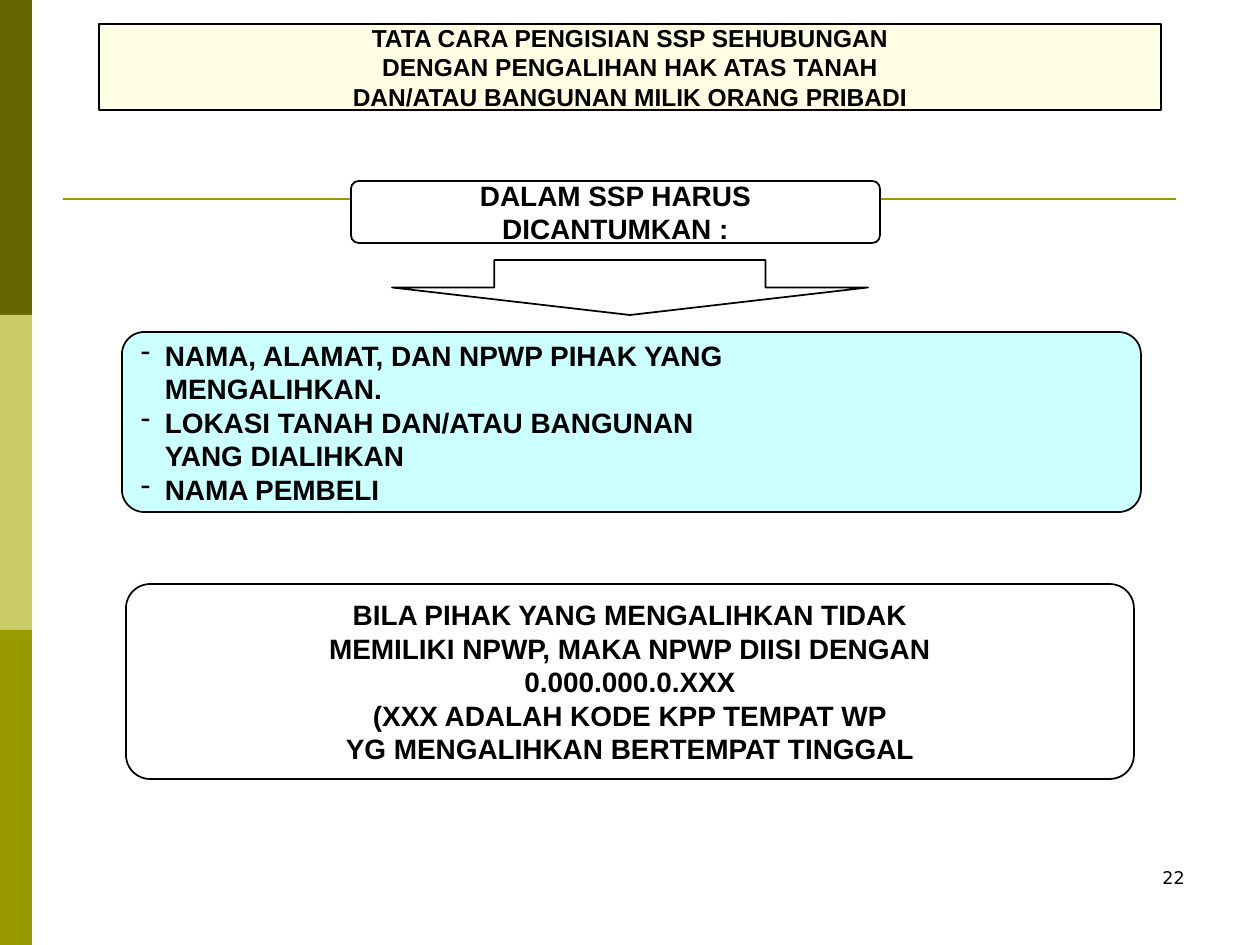
from lxml.etree import SubElement
from pptx import Presentation
from pptx.dml.color import RGBColor
from pptx.enum.shapes import MSO_CONNECTOR, MSO_SHAPE
from pptx.enum.text import MSO_ANCHOR, PP_ALIGN
from pptx.oxml.ns import qn
from pptx.util import Emu, Pt

SLIDE_WIDTH, SLIDE_HEIGHT = 1260, 945
CORNER = 0.124


def px(length):
    return Emu(round(length * 914400 / 126))


def color(code):
    return RGBColor.from_string(code)


def write_text(frame, text, size=16, font="Arial", bold=True, align=PP_ALIGN.CENTER,
               anchor=MSO_ANCHOR.MIDDLE, dash_indent=0):
    frame.word_wrap = True
    frame.vertical_anchor = anchor
    frame.text = text
    for paragraph in frame.paragraphs:
        if dash_indent:
            properties = paragraph._p.get_or_add_pPr()
            properties.set("marL", str(px(dash_indent)))
            properties.set("indent", str(-px(dash_indent)))
            SubElement(properties, qn("a:buChar"), char="-")
        paragraph.alignment = align
        for run in paragraph.runs:
            run.font.size = Pt(size)
            run.font.name = font
            run.font.bold = bold
            run.font.color.rgb = color("000000")


def add_panel(slide, kind, box, fill, outline="000000", adjustments=()):
    panel = slide.shapes.add_shape(kind, *map(px, box))
    panel.shadow.inherit = False
    panel.fill.solid()
    panel.fill.fore_color.rgb = color(fill)
    if outline:
        panel.line.color.rgb = color(outline)
        panel.line.width = Pt(1)
    else:
        panel.line.fill.background()
    for index, value in enumerate(adjustments):
        panel.adjustments[index] = value
    return panel


def add_side_band(slide, left, top, width, height):
    shades = ["666600", "CCCC66", "999900"]
    step = height // len(shades)
    for index, shade in enumerate(shades):
        add_panel(slide, MSO_SHAPE.RECTANGLE, (left, top + index * step, width, step),
                  shade, outline=None)


def add_rule(slide, left, top, width):
    rule = slide.shapes.add_connector(
        MSO_CONNECTOR.STRAIGHT, px(left), px(top), px(left + width), px(top))
    rule.line.color.rgb = color("999900")
    rule.line.width = Pt(1.5)
    SubElement(rule._element.spPr, qn("a:effectLst"))


def add_title(slide, box, text):
    title = add_panel(slide, MSO_SHAPE.RECTANGLE, box, "FFFFE5")
    write_text(title.text_frame, text, size=14)


def add_rounded_box(slide, box, text, fill="FFFFFF", **text_format):
    rounded = add_panel(slide, MSO_SHAPE.ROUNDED_RECTANGLE, box, fill, adjustments=[CORNER])
    write_text(rounded.text_frame, text, **text_format)


def add_page_number(slide, box, number):
    page_number = slide.shapes.add_textbox(*map(px, box))
    write_text(page_number.text_frame, number, size=10, font="DejaVu Sans", bold=False,
               align=PP_ALIGN.RIGHT, anchor=MSO_ANCHOR.TOP)


def main():
    deck = Presentation()
    deck.slide_width, deck.slide_height = px(SLIDE_WIDTH), px(SLIDE_HEIGHT)
    slide = deck.slides.add_slide(deck.slide_layouts[6])

    add_side_band(slide, 0, 0, 32, SLIDE_HEIGHT)
    add_rule(slide, 63, 199, 1113)
    add_page_number(slide, (903, 861, 294, 63), "22")
    add_rounded_box(slide, (126, 584, 1008, 195), "\n".join([
        "BILA PIHAK YANG MENGALIHKAN TIDAK",
        "MEMILIKI NPWP, MAKA NPWP DIISI DENGAN",
        "0.000.000.0.XXX",
        "(XXX ADALAH KODE KPP TEMPAT WP",
        "YG MENGALIHKAN BERTEMPAT TINGGAL",
    ]))
    add_rounded_box(slide, (351, 181, 529, 62), "DALAM SSP HARUS\nDICANTUMKAN :")
    add_title(slide, (99, 24, 1062, 86), "\n".join([
        "TATA CARA PENGISIAN SSP SEHUBUNGAN",
        "DENGAN PENGALIHAN HAK ATAS TANAH",
        "DAN/ATAU BANGUNAN MILIK ORANG PRIBADI",
    ]))
    add_rounded_box(slide, (122, 332, 1019, 180), "\n".join([
        "NAMA, ALAMAT, DAN NPWP PIHAK YANG\vMENGALIHKAN.",
        "LOKASI TANAH DAN/ATAU BANGUNAN\vYANG DIALIHKAN",
        "NAMA PEMBELI",
    ]), fill="CCFFFF", align=PP_ALIGN.LEFT, dash_indent=24)
    add_panel(slide, MSO_SHAPE.DOWN_ARROW, (392, 260, 476, 55), "FFFFFF",
              adjustments=[0.57, 0.5])

    deck.save("out.pptx")


if __name__ == "__main__":
    main()
